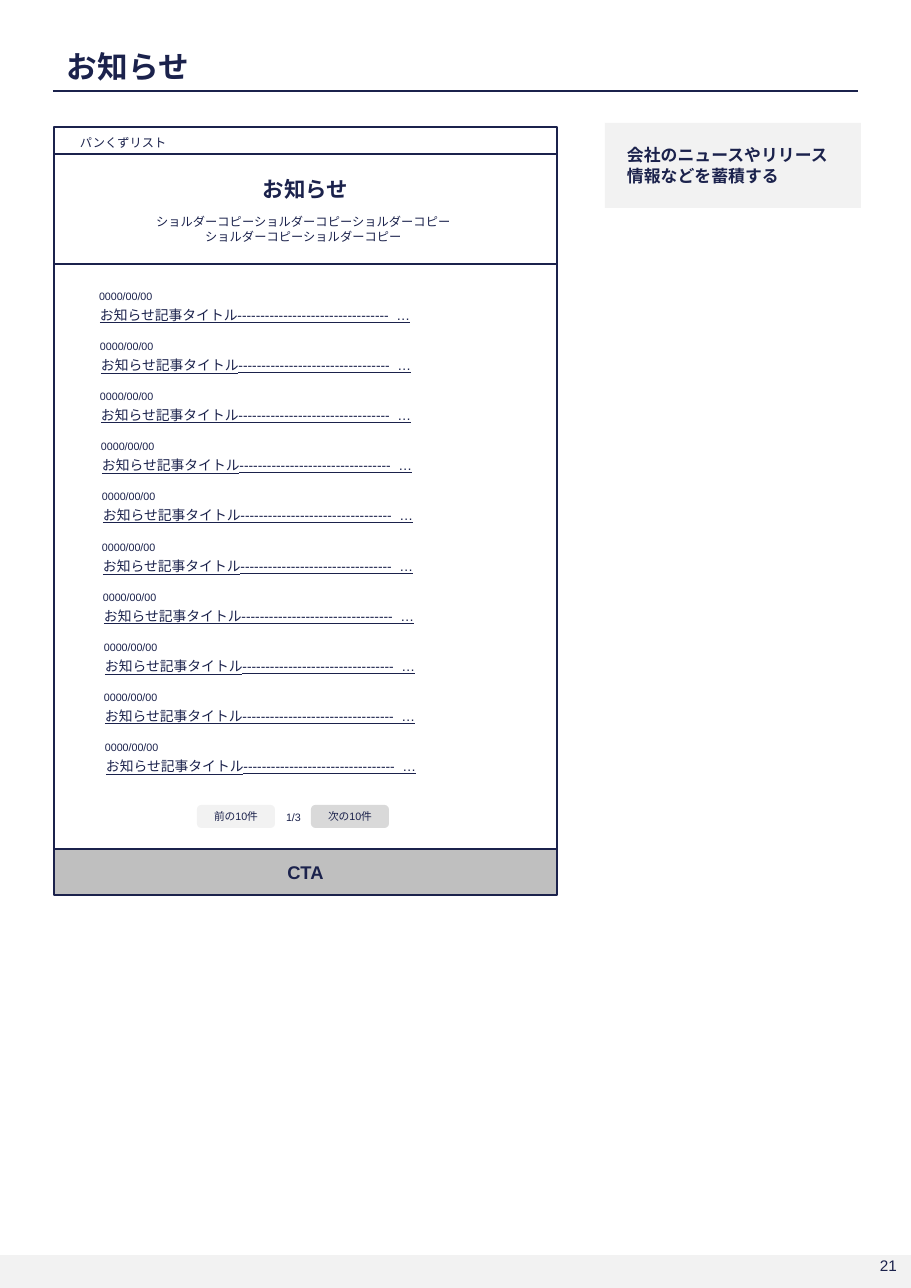
"""Build the wireframe page for the news list."""
from dataclasses import dataclass

from lxml.etree import SubElement
from pptx import Presentation
from pptx.dml.color import RGBColor
from pptx.enum.lang import MSO_LANGUAGE_ID
from pptx.enum.shapes import MSO_CONNECTOR, MSO_SHAPE
from pptx.enum.text import MSO_ANCHOR, PP_ALIGN
from pptx.oxml.ns import qn
from pptx.util import Pt

EMU_PER_PX = 8298


@dataclass(frozen=True)
class Theme:
    font: str = "Arial"
    ink: str = "1B224C"
    pale: str = "F2F2F2"
    button: str = "D9D9D9"
    cta: str = "BFBFBF"
    page_title: int = 20
    section_title: int = 14
    cta_label: int = 12
    note: int = 11
    page_number: int = 10
    article: int = 9
    body: int = 8
    small: int = 7
    rule: float = 1
    frame: float = 1.25


THEME = Theme()


def px(*lengths):
    return [length * EMU_PER_PX for length in lengths]


def write_text(shape, text, size=THEME.body, bold=False, underline=False,
               align=PP_ALIGN.LEFT, anchor=MSO_ANCHOR.TOP, insets=(0, 0, 0, 0), wrap=True):
    frame = shape.text_frame
    frame.word_wrap = wrap
    frame.vertical_anchor = anchor
    (frame.margin_left, frame.margin_top,
     frame.margin_right, frame.margin_bottom) = px(*insets)
    frame.text = text
    for paragraph in frame.paragraphs:
        paragraph.alignment = align
        for run in paragraph.runs:
            font = run.font
            font.name = THEME.font
            font.size = Pt(size)
            font.bold = bold
            font.underline = underline
            font.language_id = MSO_LANGUAGE_ID.JAPANESE
            font.color.rgb = RGBColor.from_string(THEME.ink)


def add_label(slide, box, text, **text_format):
    write_text(slide.shapes.add_textbox(*px(*box)), text, **text_format)


def add_panel(slide, box, fill=None, framed=False, rounded=False):
    kind = MSO_SHAPE.ROUNDED_RECTANGLE if rounded else MSO_SHAPE.RECTANGLE
    shape = slide.shapes.add_shape(kind, *px(*box))
    shape.shadow.inherit = False
    if rounded:
        shape.adjustments[0] = 0.19
    if fill:
        shape.fill.solid()
        shape.fill.fore_color.rgb = RGBColor.from_string(fill)
    else:
        shape.fill.background()
    if framed:
        shape.line.color.rgb = RGBColor.from_string(THEME.ink)
        shape.line.width = Pt(THEME.frame)
    else:
        shape.line.fill.background()
    return shape


def add_rule(slide, left, right, top):
    rule = slide.shapes.add_connector(MSO_CONNECTOR.STRAIGHT, *px(left, top, right, top))
    rule.line.color.rgb = RGBColor.from_string(THEME.ink)
    rule.line.width = Pt(THEME.rule)
    SubElement(rule._element.spPr, qn("a:effectLst"))


def add_page_furniture(slide):
    add_panel(slide, (0, 1255, 911, 33), fill=THEME.pale)
    add_rule(slide, 53, 858, 91)
    add_label(slide, (67, 47, 411, 38), "お知らせ", size=THEME.page_title, bold=True,
              anchor=MSO_ANCHOR.MIDDLE)
    add_label(slide, (880, 1256, 17, 19), "21", size=THEME.page_number,
              align=PP_ALIGN.RIGHT, anchor=MSO_ANCHOR.MIDDLE, wrap=False)


def add_header(slide, left, width):
    breadcrumb = add_panel(slide, (left, 127, width, 27), framed=True)
    write_text(breadcrumb, "パンくずリスト", anchor=MSO_ANCHOR.MIDDLE, insets=(26, 4, 26, 0))
    add_panel(slide, (left, 154, width, 110), framed=True)
    add_label(slide, (262, 176, 87, 26), "お知らせ", size=THEME.section_title, bold=True,
              align=PP_ALIGN.CENTER, wrap=False)
    add_label(slide, (97, 214, 413, 30),
              "ショルダーコピーショルダーコピーショルダーコピー\nショルダーコピーショルダーコピー",
              align=PP_ALIGN.CENTER, anchor=MSO_ANCHOR.BOTTOM)


def add_articles(slide, count=10):
    for index in range(count):
        left = 99 + round(index * 6 / (count - 1))
        top = 290 + round(index * 451 / (count - 1))
        add_label(slide, (left, top, 58, 13), "0000/00/00", size=THEME.small, wrap=False)
        add_label(slide, (left + 1, top + 17, 410, 17),
                  "お知らせ記事タイトル---------------------------------  …",
                  size=THEME.article, underline=True)


def add_pager(slide):
    centered = {"size": THEME.small, "align": PP_ALIGN.CENTER, "anchor": MSO_ANCHOR.MIDDLE}
    for left, text, fill in ((197, "前の10件", THEME.pale), (311, "次の10件", THEME.button)):
        button = add_panel(slide, (left, 805, 78, 23), fill=fill, rounded=True)
        write_text(button, text, **centered)
    add_label(slide, (284, 810, 19, 14), "1/3", wrap=False, **centered)


def main():
    presentation = Presentation()
    presentation.slide_width, presentation.slide_height = px(911, 1288)
    slide = presentation.slides.add_slide(presentation.slide_layouts[6])
    left, width = 54, 503

    add_page_furniture(slide)
    add_header(slide, left, width)
    add_panel(slide, (left, 264, width, 585), framed=True)
    add_articles(slide)
    add_pager(slide)
    cta = add_panel(slide, (left, 849, width, 46), fill=THEME.cta, framed=True)
    write_text(cta, "CTA", size=THEME.cta_label, bold=True, align=PP_ALIGN.CENTER,
               anchor=MSO_ANCHOR.MIDDLE)
    note = add_panel(slide, (605, 123, 256, 85), fill=THEME.pale)
    write_text(note, "会社のニュースやリリース情報などを蓄積する", size=THEME.note, bold=True,
               insets=(22, 22, 22, 22))
    presentation.save("out.pptx")


if __name__ == "__main__":
    main()
